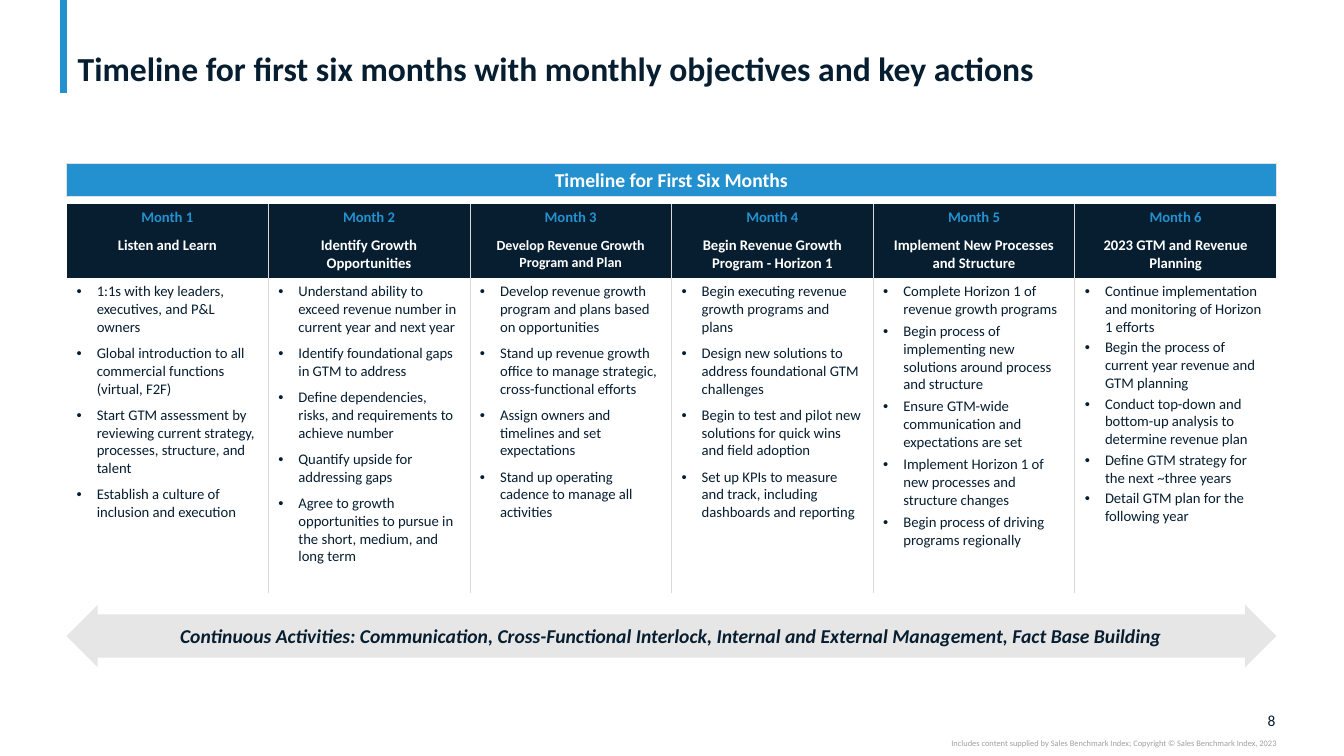
from lxml.etree import SubElement
from pptx import Presentation
from pptx.dml.color import RGBColor
from pptx.enum.shapes import MSO_CONNECTOR, MSO_SHAPE
from pptx.enum.text import MSO_ANCHOR as ANCHOR, MSO_AUTO_SIZE, PP_ALIGN as ALIGN
from pptx.oxml import parse_xml
from pptx.oxml.ns import nsdecls, qn
from pptx.util import Pt

PX = 9144  # 100 px to the inch
COLORS = {
    "navy": "071E31", "blue": "2391CF", "white": "FFFFFF", "rule": "D9D9D9",
    "outline": "E0E3E6", "arrow": "E7E6E6", "credit": "A0A0A0",
}
NO_STYLE_NO_GRID = "{2D5ABB26-0587-4C30-8999-92F81FD0307C}"
LEFT, WIDTH = 66, 1200
COLUMN_WIDTH = WIDTH // 6
ROW_HEIGHTS = [28, 44, 313]

# Objective, its text size, space after each action, actions
MONTHS = [
    ("Listen and Learn", 10.5, 6, [
        "1:1s with key leaders, executives, and P&L owners",
        "Global introduction to all commercial functions (virtual, F2F)",
        "Start GTM assessment by reviewing current strategy, processes, structure, and talent",
        "Establish a culture of inclusion and execution"]),
    ("Identify Growth Opportunities", 10.5, 6, [
        "Understand ability to exceed revenue number in current year and next year",
        "Identify foundational gaps in GTM to address",
        "Define dependencies, risks, and requirements to achieve number",
        "Quantify upside for addressing gaps",
        "Agree to growth opportunities to pursue in the short, medium, and long term"]),
    ("Develop Revenue Growth Program and Plan", 10, 6, [
        "Develop revenue growth program and plans based on opportunities",
        "Stand up revenue growth office to manage strategic, cross-functional efforts",
        "Assign owners and timelines and set expectations",
        "Stand up operating cadence to manage all activities"]),
    ("Begin Revenue Growth Program - Horizon 1", 10.5, 6, [
        "Begin executing revenue growth programs and plans",
        "Design new solutions to address foundational GTM challenges",
        "Begin to test and pilot new solutions for quick wins and field adoption",
        "Set up KPIs to measure and track, including dashboards and reporting"]),
    ("Implement New Processes and Structure", 10.5, 3, [
        "Complete Horizon 1 of revenue growth programs",
        "Begin process of implementing new solutions around process and structure",
        "Ensure GTM-wide communication and expectations are set",
        "Implement Horizon 1 of new processes and structure changes",
        "Begin process of driving programs regionally"]),
    ("2023 GTM and Revenue Planning", 10.5, 2, [
        "Continue implementation and monitoring of Horizon 1 efforts",
        "Begin the process of current year revenue and GTM planning",
        "Conduct top-down and bottom-up analysis to determine revenue plan",
        "Define GTM strategy for the next ~three years",
        "Detail GTM plan for the following year"]),
]


def rgb(name):
    return RGBColor.from_string(COLORS[name])


def write(paragraph, text, size, color, align=ALIGN.LEFT, bold=False, italic=False):
    paragraph.text = text
    paragraph.alignment = align
    font = paragraph.runs[0].font
    font.name, font.size, font.bold, font.italic = "Calibri", Pt(size), bold, italic
    font.color.rgb = rgb(color)


deck = Presentation()
deck.slide_width, deck.slide_height = 1333 * PX, 750 * PX
slide = deck.slides.add_slide(deck.slide_layouts[5])
shapes = slide.shapes

# Title with its accent bar
accent = shapes.add_connector(MSO_CONNECTOR.STRAIGHT, 63 * PX, 0, 63 * PX, 92 * PX)
accent.line.color.rgb = rgb("blue")
accent.line.width = Pt(5)
SubElement(accent._element.spPr, qn("a:effectLst"))

title = shapes.title
title.left, title.top, title.width, title.height = 67 * PX, 4 * PX, 1199 * PX, 84 * PX
title_frame = title.text_frame
title_frame.auto_size = MSO_AUTO_SIZE.NONE
title_frame.vertical_anchor = ANCHOR.BOTTOM
title_frame.margin_left = title_frame.margin_right = 10 * PX
title_frame.margin_top = title_frame.margin_bottom = 0
write(title_frame.paragraphs[0],
      "Timeline for first six months with monthly objectives and key actions",
      24, "navy", bold=True)
title_frame.paragraphs[0].line_spacing = 0.9

# Monthly table
timeline = shapes.add_table(3, 6, LEFT * PX, 202 * PX, WIDTH * PX, sum(ROW_HEIGHTS) * PX).table
timeline.first_row = timeline.horz_banding = False
timeline._tbl.tblPr.find(qn("a:tableStyleId")).text = NO_STYLE_NO_GRID
for row, height in zip(timeline.rows, ROW_HEIGHTS):
    row.height = height * PX

for col, (objective, objective_size, gap, actions) in enumerate(MONTHS):
    timeline.columns[col].width = COLUMN_WIDTH * PX
    month_cell, objective_cell, actions_cell = (timeline.cell(row, col) for row in range(3))
    write(month_cell.text_frame.paragraphs[0], f"Month {col + 1}", 10.5, "blue",
          ALIGN.CENTER, bold=True)
    write(objective_cell.text_frame.paragraphs[0], objective, objective_size, "white",
          ALIGN.CENTER, bold=True)
    for header_cell in (month_cell, objective_cell):
        header_cell.fill.solid()
        header_cell.fill.fore_color.rgb = rgb("navy")
    actions_cell.fill.background()

    actions_frame = actions_cell.text_frame
    for index, action in enumerate(actions):
        paragraph = actions_frame.add_paragraph() if index else actions_frame.paragraphs[0]
        props = paragraph._p.get_or_add_pPr()
        props.set("marL", str(20 * PX))
        props.set("indent", str(-20 * PX))
        bullet_color = SubElement(props, qn("a:buClr"))
        SubElement(bullet_color, qn("a:srgbClr"), val=COLORS["navy"])
        SubElement(props, qn("a:buFont"), typeface="Arial")
        SubElement(props, qn("a:buChar"), char="•")
        write(paragraph, action, 10.5, "navy")
        paragraph.space_after = Pt(gap)

    # Rules only between months
    sides = [side for side, inner in (("lnL", col > 0), ("lnR", col < 5)) if inner]
    for cell in (month_cell, objective_cell, actions_cell):
        for position, side in enumerate(sides):
            cell._tc.get_or_add_tcPr().insert(position, parse_xml(
                f'<a:{side} {nsdecls("a")} w="{Pt(0.5)}"><a:solidFill>'
                f'<a:srgbClr val="{COLORS["rule"]}"/></a:solidFill></a:{side}>'))

# Banner above the table and arrow below it
for kind, top, height, fill, text, color, italic in [
    (MSO_SHAPE.RECTANGLE, 162, 33, "blue", "Timeline for First Six Months", "white", False),
    (MSO_SHAPE.LEFT_RIGHT_ARROW, 600, 62, "arrow",
     "Continuous Activities: Communication, Cross-Functional Interlock, "
     "Internal and External Management, Fact Base Building", "navy", True),
]:
    band = shapes.add_shape(kind, LEFT * PX, top * PX, WIDTH * PX, height * PX)
    band.shadow.inherit = False
    band.fill.solid()
    band.fill.fore_color.rgb = rgb(fill)
    if kind == MSO_SHAPE.RECTANGLE:
        band.line.color.rgb = rgb("outline")
        band.line.width = Pt(0.75)
    else:
        band.line.fill.background()
        band.adjustments[0], band.adjustments[1] = 0.69, 0.5
    frame = band.text_frame
    frame.margin_left = frame.margin_right = frame.margin_top = frame.margin_bottom = 0
    frame.vertical_anchor = ANCHOR.MIDDLE
    write(frame.paragraphs[0], text, 14, color, ALIGN.CENTER, bold=True, italic=italic)

# Page number and copyright line
for left, top, width, height, text, size, color, anchor in [
    (1232, 705, 33, 19, "8", 11, "navy", ANCHOR.MIDDLE),
    (750, 732, 516, 10,
     "Includes content supplied by Sales Benchmark Index; "
     "Copyright © Sales Benchmark Index, 2023", 6, "credit", ANCHOR.TOP),
]:
    frame = shapes.add_textbox(left * PX, top * PX, width * PX, height * PX).text_frame
    frame.word_wrap = True
    frame.margin_left = frame.margin_right = frame.margin_top = frame.margin_bottom = 0
    frame.vertical_anchor = anchor
    write(frame.paragraphs[0], text, size, color, ALIGN.RIGHT)

deck.save("out.pptx")
